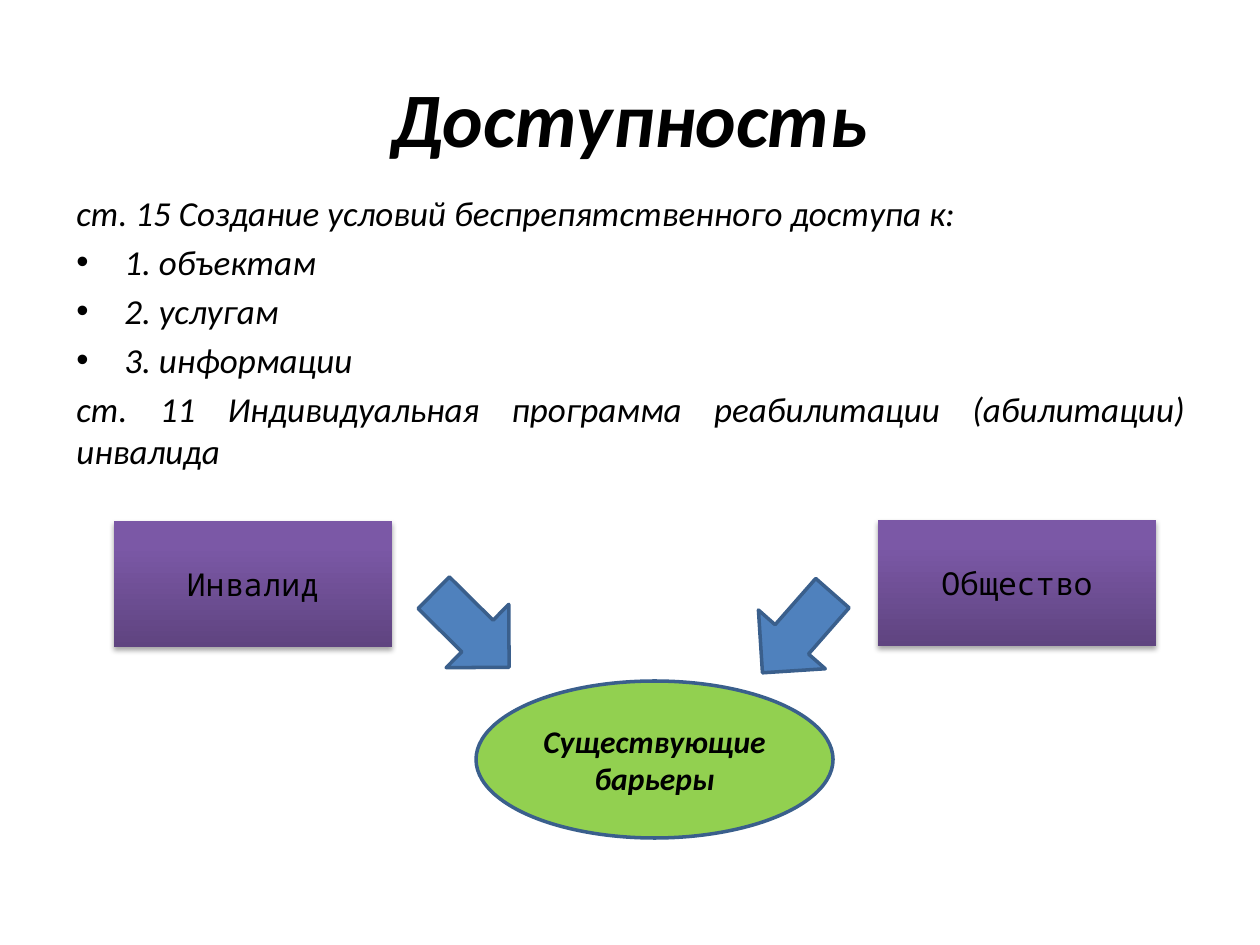
from copy import deepcopy

from lxml import etree
from pptx import Presentation, util as u
from pptx.dml.color import RGBColor
from pptx.enum import shapes, text
from pptx.oxml import ns

BLACK = RGBColor(0, 0, 0)
BLUE = RGBColor(0x4F, 0x81, 0xBD)
NAVY = RGBColor(0x3A, 0x5F, 0x8C)
GREEN = RGBColor(0x92, 0xD0, 0x50)
PURPLES = [
    (0, RGBColor(0x5F, 0x44, 0x80)),
    (0.8, RGBColor(0x7B, 0x58, 0xA6)),
    (1, RGBColor(0x7C, 0x57, 0xA8)),
]
PX = 914400 / 126
FORM = shapes.MSO_SHAPE


def place(make, *args):
    """Call an add method whose last four arguments are in px."""
    *kind, x, y, w, h = args
    return make(*kind, *(round(n * PX) for n in (x, y, w, h)))


def write(par, words, size, face="Calibri", bold=False, italic=True,
          align=text.PP_ALIGN.CENTER):
    par.text = words
    par.alignment = align
    font = par.font
    font.name, font.size = face, u.Pt(size)
    font.bold, font.italic = bold, italic
    font.color.rgb = BLACK


prs = Presentation()
prs.slide_width, prs.slide_height = round(1260 * PX), round(945 * PX)
slide = prs.slides.add_slide(prs.slide_layouts[6])
add = slide.shapes

# Title
title = place(add.add_textbox, 63, 38, 1134, 157).text_frame
title.word_wrap = True
title.vertical_anchor = text.MSO_ANCHOR.MIDDLE
write(title.paragraphs[0], "Доступность", 44, bold=True)

# Law articles, with a bulleted list between them
body = place(add.add_textbox, 64, 185, 1134, 624).text_frame
body.word_wrap = True
lines = [
    ("ст. 15 Создание условий беспрепятственного доступа к:", False),
    ("1. объектам", True),
    ("2. услугам", True),
    ("3. информации", True),
    ("ст. 11 Индивидуальная программа реабилитации (абилитации) инвалида", False),
]
for i, (words, dot) in enumerate(lines):
    par = body.add_paragraph() if i else body.paragraphs[0]
    write(par, words, 20, align=text.PP_ALIGN.JUSTIFY)
    par.space_before = u.Pt(4)
    if dot:
        props = par._p.get_or_add_pPr()
        indent = round(48 * PX)
        props.set("marL", str(indent))
        props.set("indent", str(-indent))
        etree.SubElement(props, ns.qn("a:buFont"), typeface="Arial")
        etree.SubElement(props, ns.qn("a:buChar"), char="•")

# The two sides
for words, x, y in [("Инвалид", 114, 521), ("Общество", 878, 520)]:
    box = place(add.add_shape, FORM.RECTANGLE, x, y, 278, 126)
    box.line.fill.background()
    box.fill.gradient()
    box.fill.gradient_angle = 90
    stops = box._element.spPr.find(".//" + ns.qn("a:gsLst"))
    stops.append(deepcopy(stops[-1]))
    for stop, (pos, color) in zip(box.fill.gradient_stops, PURPLES):
        stop.position = pos
        stop.color.rgb = color
    box.shadow.inherit = False
    effects = box._element.spPr.find(ns.qn("a:effectLst"))
    shade = etree.SubElement(
        effects, ns.qn("a:outerShdw"), blurRad=str(u.Pt(3.1)),
        dist=str(u.Pt(1.8)), dir="5400000", rotWithShape="0")
    tint = etree.SubElement(shade, ns.qn("a:srgbClr"), val=str(BLACK))
    etree.SubElement(tint, ns.qn("a:alpha"), val="35000")
    box.text_frame.vertical_anchor = text.MSO_ANCHOR.MIDDLE
    write(box.text_frame.paragraphs[0], words, 18, "Noto Sans Mono", italic=False)

# Arrows leading to the barriers
marks = [
    (FORM.DOWN_ARROW, (427, 577, 89, 106), 314.7, BLUE, ""),
    (FORM.DOWN_ARROW, (753, 580, 89, 106), 41.3, BLUE, ""),
    (FORM.OVAL, (476, 681, 357, 157), 0, GREEN, "Существующие барьеры"),
]
for form, area, turn, color, words in marks:
    mark = place(add.add_shape, form, *area)
    mark.rotation = turn
    mark.shadow.inherit = False
    mark.fill.solid()
    mark.fill.fore_color.rgb = color
    mark.line.color.rgb = NAVY
    mark.line.width = u.Pt(2)
    if words:
        mark.text_frame.word_wrap = True
        mark.text_frame.vertical_anchor = text.MSO_ANCHOR.MIDDLE
        write(mark.text_frame.paragraphs[0], words, 18, bold=True)

prs.save("out.pptx")
